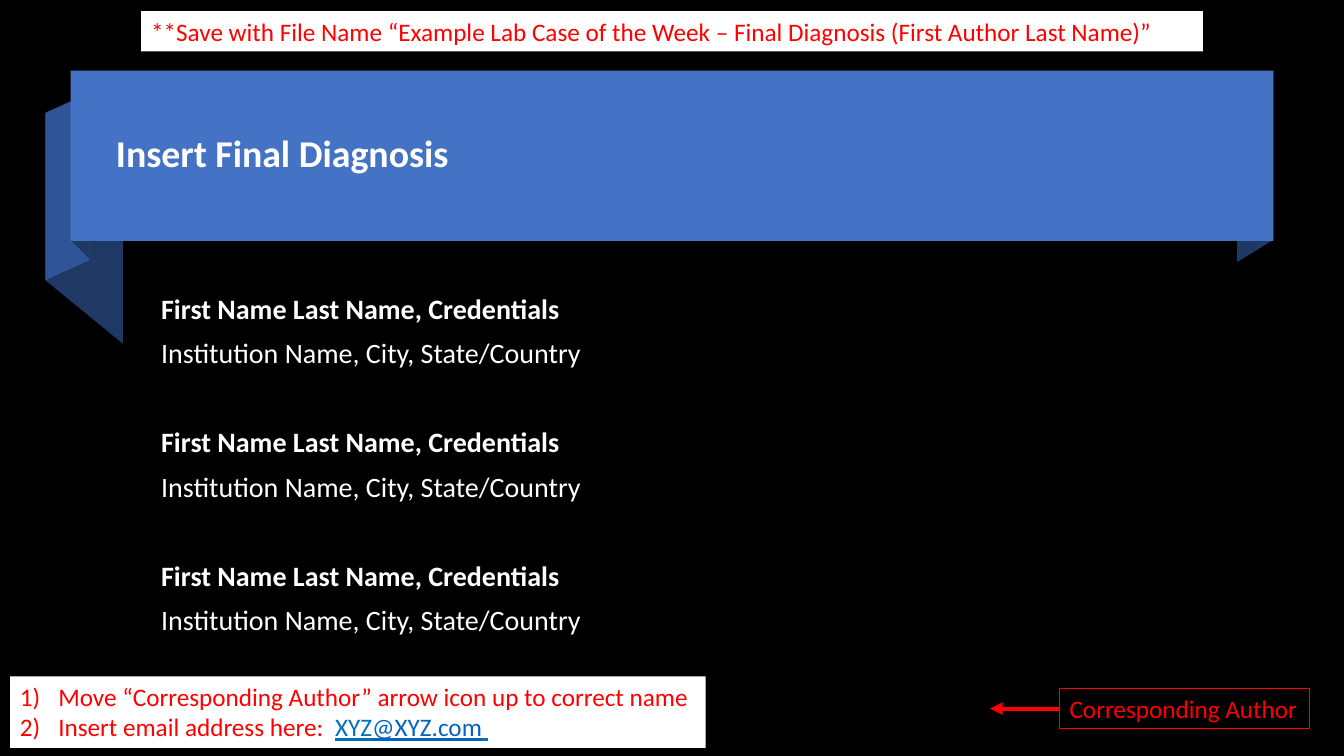
from dataclasses import dataclass

from lxml.etree import SubElement
from pptx import Presentation
from pptx.dml.color import RGBColor as Rgb
from pptx.enum.shapes import MSO_CONNECTOR as Connector, MSO_SHAPE as Preset
from pptx.enum.text import MSO_ANCHOR as Anchor, PP_ALIGN as Align
from pptx.oxml.ns import qn
from pptx.util import Pt

PX = 9144  # EMU in one px, 100 px to the inch


@dataclass(frozen=True)
class Theme:
    font: str = "Calibri"
    page: str = "000000"
    text: str = "FFFFFF"
    banner: str = "4472C4"
    fold: str = "2F5597"
    shade: str = "203864"
    note: str = "FF0000"
    note_fill: str = "FFFFFF"
    address: str = "0070C0"
    link: str = "0563C1"
    title_size: int = 27
    author_size: int = 20
    note_size: int = 18


THEME = Theme()


@dataclass(frozen=True)
class Box:
    left: int
    top: int
    width: int
    height: int

    def emu(self) -> tuple:
        return tuple(n * PX for n in (self.left, self.top, self.width, self.height))


@dataclass(frozen=True)
class Fold:
    points: tuple
    color: str


@dataclass(frozen=True)
class Span:
    text: str
    color: str = THEME.note
    underline: bool = False


@dataclass(frozen=True)
class Note:
    box: Box
    paras: tuple
    fill: str = ""
    line: str = ""
    numbered: bool = False


BANNER = Box(70, 70, 1193, 169)
TITLE = Box(105, 88, 1123, 133)
AUTHORS = Box(150, 293, 1062, 390)
ARROW_TIP = 982

FOLDS = (
    Fold(((122, 341), (45, 278), (45, 112), (122, 175)), THEME.shade),
    Fold(((89, 258), (45, 278), (45, 112), (89, 92)), THEME.fold),
    Fold(((89, 257), (71, 239), (71, 70), (89, 89)), THEME.shade),
    Fold(((1263, 238), (1227, 260), (1227, 91), (1263, 70)), THEME.shade),
)

AUTHOR_COUNT = 3
AUTHOR_LINES = ("First Name Last Name, Credentials", "Institution Name, City, State/Country")
FIRST_GAP, LINE_GAP, AUTHOR_GAP = 7, 10, 42  # points

FILE_NOTE = Note(
    Box(140, 11, 1053, 40),
    ((Span("**Save with File Name “Example Lab Case of the Week – "
           "Final Diagnosis (First Author Last Name)”"),),),
    fill=THEME.note_fill,
)
AUTHOR_TAG = Note(Box(1051, 683, 248, 40), ((Span("Corresponding Author"),),), line=THEME.note)
STEPS = Note(
    Box(10, 671, 690, 71),
    (
        (Span("Move “Corresponding Author” arrow icon up to correct name"),),
        (
            Span("Insert email address here:  "),
            Span("XYZ", THEME.address, True),
            Span("@XYZ.com", THEME.link, True),
            Span(" ", THEME.address, True),
        ),
    ),
    fill=THEME.note_fill,
    numbered=True,
)


def paint(shape, fill: str = "", line: str = "") -> None:
    shape.shadow.inherit = False
    if fill:
        shape.fill.solid()
        shape.fill.fore_color.rgb = Rgb.from_string(fill)
    else:
        shape.fill.background()
    if line:
        shape.line.color.rgb = Rgb.from_string(line)
        shape.line.width = Pt(0.75)
    else:
        shape.line.fill.background()


def add_run(para, text: str, size: int, color: str, bold: bool = False, underline: bool = False) -> None:
    run = para.add_run()
    run.text = text
    run.font.name = THEME.font
    run.font.size = Pt(size)
    run.font.bold = bold
    run.font.underline = underline
    run.font.color.rgb = Rgb.from_string(color)


def next_para(frame, index: int):
    para = frame.add_paragraph() if index else frame.paragraphs[0]
    para.alignment = Align.LEFT
    return para


def add_fold(page, fold: Fold) -> None:
    start, *rest = fold.points
    outline = page.shapes.build_freeform(*start, scale=PX)
    outline.add_line_segments(rest, close=True)
    paint(outline.convert_to_shape(), fold.color)


def add_title(page) -> None:
    title = page.shapes.title
    title.element.getparent().append(title.element)  # in front of the banner
    title.left, title.top, title.width, title.height = TITLE.emu()
    title.text_frame.vertical_anchor = Anchor.MIDDLE
    para = next_para(title.text_frame, 0)
    para.line_spacing = 0.9
    add_run(para, "Insert Final Diagnosis", THEME.title_size, THEME.text, bold=True)


def add_authors(page) -> None:
    frame = page.shapes.add_textbox(*AUTHORS.emu()).text_frame
    frame.word_wrap = True
    frame.margin_top = 0
    for index in range(AUTHOR_COUNT * len(AUTHOR_LINES)):
        author, row = divmod(index, len(AUTHOR_LINES))
        para = next_para(frame, index)
        para.line_spacing = 0.9
        para.space_before = Pt(LINE_GAP if row else AUTHOR_GAP if author else FIRST_GAP)
        add_run(para, AUTHOR_LINES[row], THEME.author_size, THEME.text, bold=row == 0)


def number(para) -> None:
    props = para._p.get_or_add_pPr()
    props.set("marL", str(38 * PX))
    props.set("indent", str(-38 * PX))
    SubElement(props, qn("a:buFont"), typeface="+mj-lt")
    SubElement(props, qn("a:buAutoNum"), type="arabicParenR")


def add_note(shapes, note: Note):
    shape = shapes.add_shape(Preset.RECTANGLE, *note.box.emu())
    paint(shape, note.fill, note.line)
    frame = shape.text_frame
    frame.word_wrap = True
    frame.vertical_anchor = Anchor.TOP
    for index, spans in enumerate(note.paras):
        para = next_para(frame, index)
        if note.numbered:
            number(para)
        for span in spans:
            add_run(para, span.text, THEME.note_size, span.color, underline=span.underline)
    return shape


def add_author_arrow(page) -> None:
    group = page.shapes.add_group_shape()
    tag = add_note(group.shapes, AUTHOR_TAG)
    middle = tag.top + tag.height // 2
    arrow = group.shapes.add_connector(Connector.STRAIGHT, tag.left, middle, ARROW_TIP * PX, middle)
    arrow.begin_connect(tag, 1)
    arrow.line.color.rgb = Rgb.from_string(THEME.note)
    arrow.line.width = Pt(3)
    SubElement(arrow.line._get_or_add_ln(), qn("a:tailEnd"), type="triangle")
    SubElement(arrow.element.spPr, qn("a:effectLst"))


def main() -> None:
    deck = Presentation()
    deck.slide_width, deck.slide_height = 1333 * PX, 750 * PX
    page = deck.slides.add_slide(deck.slide_layouts.get_by_name("Title Only"))
    page.background.fill.solid()
    page.background.fill.fore_color.rgb = Rgb.from_string(THEME.page)

    # Ribbon banner
    for fold in FOLDS:
        add_fold(page, fold)
    paint(page.shapes.add_shape(Preset.RECTANGLE, *BANNER.emu()), THEME.banner)

    # Title and authors
    add_title(page)
    add_authors(page)

    # Instructions
    add_note(page.shapes, FILE_NOTE)
    add_author_arrow(page)
    add_note(page.shapes, STEPS)

    deck.save("out.pptx")


if __name__ == "__main__":
    main()
